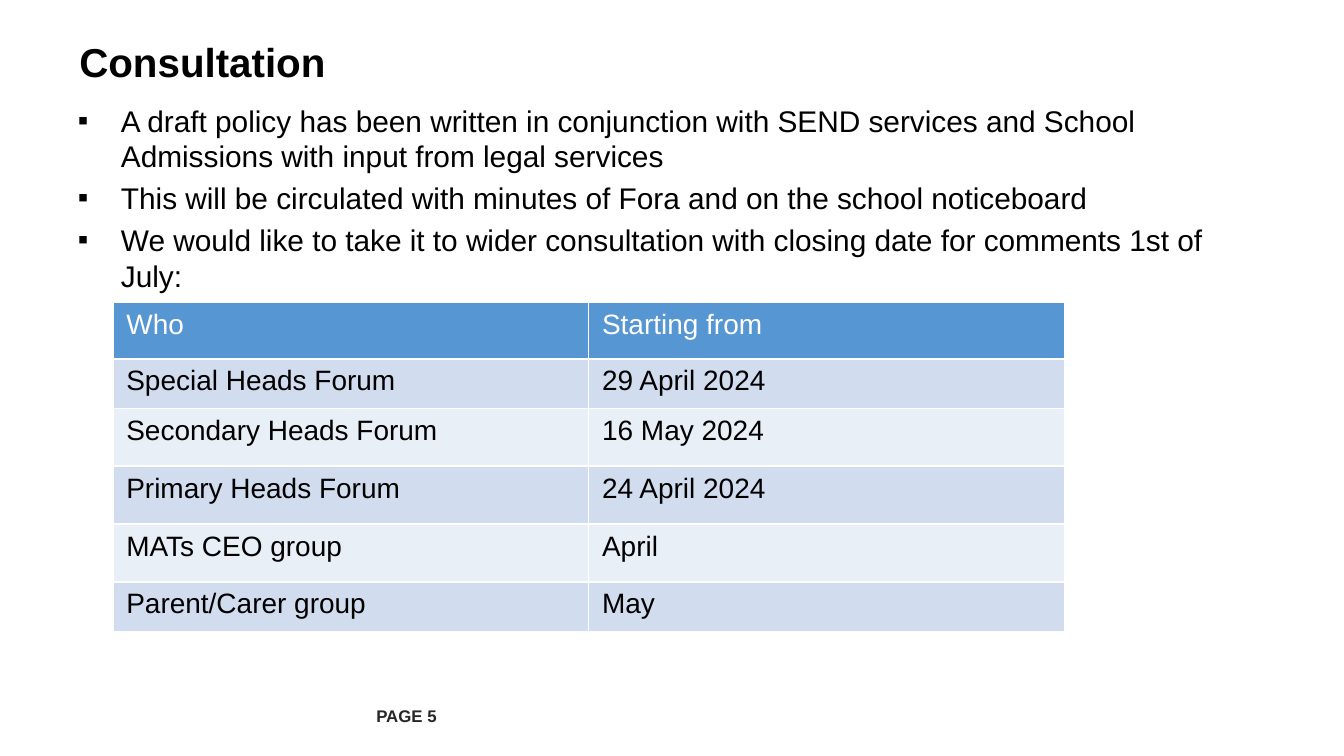
from lxml import etree
from pptx import Presentation, util as u
from pptx.dml.color import RGBColor
from pptx.enum import text
from pptx.oxml import ns

THEME = {
    "font": "Arial",
    "ink": "000000", "footer": "262626", "white": "FFFFFF",
    "header": "5696D2", "bands": ("D1DDEE", "E9EFF7"),
    "title_pt": 21.6, "body_pt": 16, "table_pt": 15, "footer_pt": 9,
}
WIDTH = u.Inches(10)
HEIGHT = WIDTH * 9 // 16
MARGIN = WIDTH * 0.05


def write(frame, lines, size, color="ink", bold=False, bullet=None,
          anchor=text.MSO_ANCHOR.TOP):
    """Fill a text frame with one paragraph per line."""
    frame.word_wrap = True
    frame.vertical_anchor = anchor
    frame.margin_left = frame.margin_right = u.Inches(0.09)
    frame.margin_top = frame.margin_bottom = u.Inches(0.04)
    for index, line in enumerate(lines):
        para = frame.paragraphs[0] if index == 0 else frame.add_paragraph()
        if bullet:
            props = para._p.get_or_add_pPr()
            props.set("marL", str(u.Inches(0.32)))
            props.set("indent", str(-u.Inches(0.32)))
            etree.SubElement(props, ns.qn("a:buFont"), typeface=THEME["font"])
            etree.SubElement(props, ns.qn("a:buChar"), char=bullet)
            if index:
                para.space_before = u.Pt(0.2 * THEME[size])
        run = para.add_run()
        run.text = line
        run.font.name = THEME["font"]
        run.font.size = u.Pt(THEME[size])
        run.font.bold = bold
        run.font.color.rgb = RGBColor.from_string(THEME[color])


def border(cell, side):
    """Draw a thin white line on one side of a cell."""
    line = etree.SubElement(cell._tc.get_or_add_tcPr(), ns.qn(f"a:ln{side}"),
                            w=str(u.Pt(1)))
    fill = etree.SubElement(line, ns.qn("a:solidFill"))
    etree.SubElement(fill, ns.qn("a:srgbClr"), val=THEME["white"])


prs = Presentation()
prs.slide_width, prs.slide_height = WIDTH, HEIGHT
slide = prs.slides.add_slide(prs.slide_layouts[6])
shapes = slide.shapes

# Footer
footer = shapes.add_textbox(int(WIDTH * 0.27), int(HEIGHT * 0.92),
                            int(WIDTH * 0.09), u.Inches(0.3))
write(footer.text_frame, ["PAGE 5"], "footer_pt", color="footer", bold=True,
      anchor=text.MSO_ANCHOR.MIDDLE)
footer.left = u.Inches(2.71)

# Title
title = shapes.add_textbox(int(MARGIN), u.Inches(0.23),
                           int(WIDTH - 2 * MARGIN), u.Inches(0.46))
write(title.text_frame, ["Consultation"], "title_pt", bold=True,
      anchor=text.MSO_ANCHOR.MIDDLE)

# Bullet points
points = shapes.add_textbox(u.Inches(0.49), u.Inches(0.72),
                            int(WIDTH - 2 * MARGIN), u.Inches(4.18))
write(points.text_frame, [
    "A draft policy has been written in conjunction with SEND services and "
    "School Admissions with input from legal services",
    "This will be circulated with minutes of Fora and on the school noticeboard",
    "We would like to take it to wider consultation with closing date for "
    "comments 1st of July:",
], "body_pt", bullet="▪")

# Consultation timetable
timetable = [
    ("Who", "Starting from"),
    ("Special Heads Forum", "29 April 2024"),
    ("Secondary Heads Forum", "16 May 2024"),
    ("Primary Heads Forum", "24 April 2024"),
    ("MATs CEO group", "April"),
    ("Parent/Carer group", "May"),
]
row_heights = [0.42, 0.37, 0.43, 0.43, 0.43, 0.37]
table = shapes.add_table(len(timetable), 2, u.Inches(0.84), u.Inches(2.25),
                         u.Inches(7.08), u.Inches(sum(row_heights))).table
for column in table.columns:
    column.width = u.Inches(3.54)
for r, (entries, height) in enumerate(zip(timetable, row_heights)):
    table.rows[r].height = u.Inches(height)
    is_header = r == 0
    for c, entry in enumerate(entries):
        cell = table.cell(r, c)
        for side in "LRTB":
            border(cell, side)
        cell.fill.solid()
        cell.fill.fore_color.rgb = RGBColor.from_string(
            THEME["header"] if is_header else THEME["bands"][(r - 1) % 2])
        write(cell.text_frame, [entry], "table_pt",
              color="white" if is_header else "ink")
        cell.margin_left = cell.margin_right = u.Inches(0.1)
        cell.margin_top = cell.margin_bottom = u.Inches(0.05)

prs.save("out.pptx")
